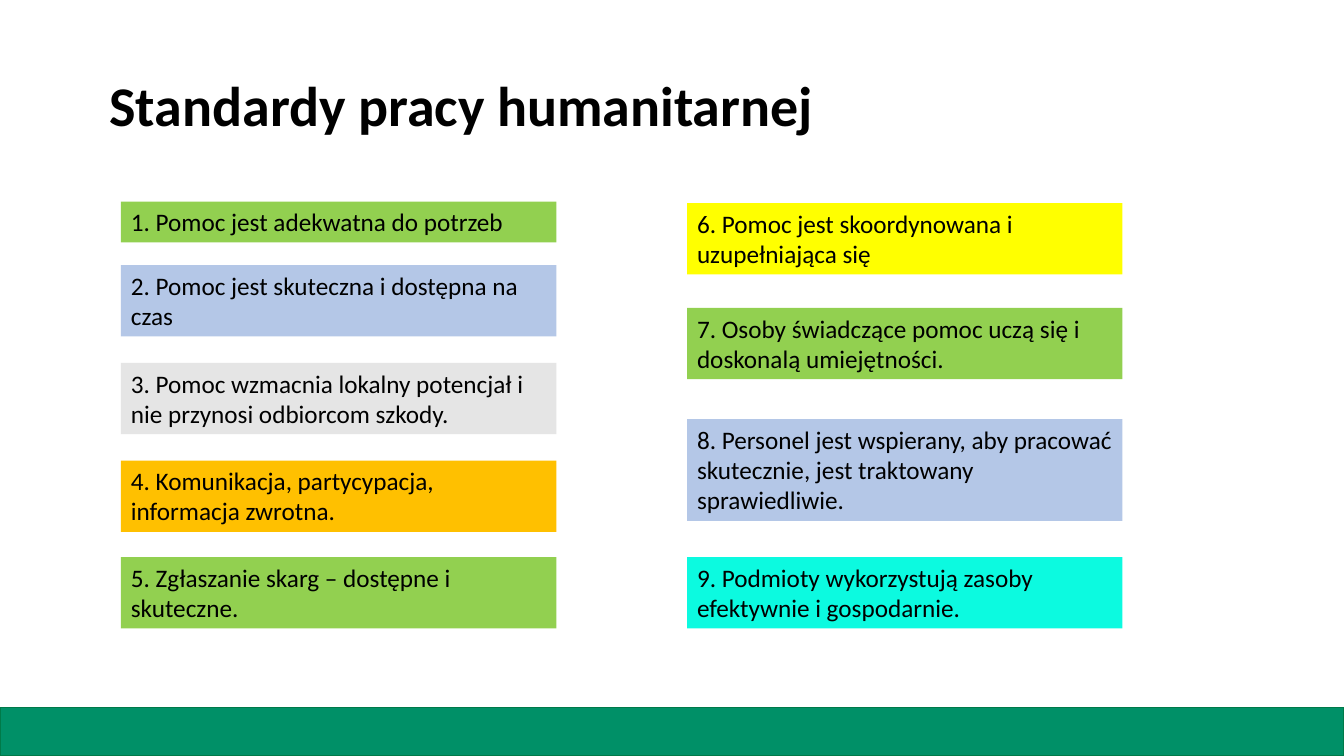
"""Build the slide on the standards of humanitarian work."""
import pptx
import pptx.dml.color
import pptx.enum.shapes
import pptx.enum.text
import pptx.util

Pt = pptx.util.Pt

SLIDE_WIDTH, SLIDE_HEIGHT = 960, 540
CARD_WIDTH = 311
LINE_HEIGHT = 21.8
CARD_PADDING = 7.3

GREEN, BLUE, GREY = "92D050", "B4C7E7", "E5E5E5"
ORANGE, YELLOW, TURQUOISE = "FFC000", "FFFF00", "0CFAE0"

COLUMNS = {
    86.4: [
        (144, 1, GREEN, "1. Pomoc jest adekwatna do potrzeb"),
        (189.4, 2, BLUE, "2. Pomoc jest skuteczna i dostępna na czas"),
        (259.2, 2, GREY, "3. Pomoc wzmacnia lokalny potencjał i nie przynosi odbiorcom szkody."),
        (329, 2, ORANGE, "4. Komunikacja, partycypacja, informacja zwrotna."),
        (398, 2, GREEN, "5. Zgłaszanie skarg – dostępne i skuteczne."),
    ],
    490.8: [
        (145.2, 2, YELLOW, "6. Pomoc jest skoordynowana i uzupełniająca się"),
        (220, 2, GREEN, "7. Osoby świadczące pomoc uczą się i doskonalą umiejętności."),
        (299.4, 3, BLUE, "8. Personel jest wspierany, aby pracować skutecznie, jest traktowany sprawiedliwie."),
        (398, 2, TURQUOISE, "9. Podmioty wykorzystują zasoby efektywnie i gospodarnie."),
    ],
}


def color(value):
    return pptx.dml.color.RGBColor.from_string(value)


class SlideBuilder:
    def __init__(self, slide, font="Calibri", text_color="000000"):
        self.slide = slide
        self.font = font
        self.text_color = text_color

    def add_text(self, shape, text, size, bold=False,
                 anchor=pptx.enum.text.MSO_ANCHOR.TOP, line_spacing=1.0):
        frame = shape.text_frame
        frame.word_wrap = True
        frame.vertical_anchor = anchor
        paragraph = frame.paragraphs[0]
        paragraph.alignment = pptx.enum.text.PP_ALIGN.LEFT
        paragraph.line_spacing = line_spacing
        run = paragraph.add_run()
        run.text = text
        run.font.name = self.font
        run.font.size = Pt(size)
        run.font.bold = bold
        run.font.color.rgb = color(self.text_color)

    def rectangle(self, left, top, width, height, fill, line=None):
        shape = self.slide.shapes.add_shape(
            pptx.enum.shapes.MSO_SHAPE.RECTANGLE, Pt(left), Pt(top), Pt(width), Pt(height))
        shape.shadow.inherit = False
        shape.fill.solid()
        shape.fill.fore_color.rgb = color(fill)
        if line:
            shape.line.color.rgb = color(line)
            shape.line.width = Pt(1)
        else:
            shape.line.fill.background()
        return shape

    def title(self, left, top, width, height, text):
        box = self.slide.shapes.add_textbox(Pt(left), Pt(top), Pt(width), Pt(height))
        self.add_text(box, text, 40, bold=True,
                      anchor=pptx.enum.text.MSO_ANCHOR.MIDDLE, line_spacing=0.9)

    def card(self, left, top, lines, fill, text):
        height = lines * LINE_HEIGHT + CARD_PADDING
        shape = self.rectangle(left, top, CARD_WIDTH, height, fill)
        self.add_text(shape, text, 18)
        shape.text_frame.auto_size = pptx.enum.text.MSO_AUTO_SIZE.SHAPE_TO_FIT_TEXT


def main():
    presentation = pptx.Presentation()
    presentation.slide_width = Pt(SLIDE_WIDTH)
    presentation.slide_height = Pt(SLIDE_HEIGHT)
    builder = SlideBuilder(presentation.slides.add_slide(presentation.slide_layouts[6]))
    builder.rectangle(0, 505.4, SLIDE_WIDTH, 34.6, "009067", line="007A49")
    builder.title(71.2, 25, 828, 104.4, "Standardy pracy humanitarnej")
    for left, cards in COLUMNS.items():
        for top, lines, fill, text in cards:
            builder.card(left, top, lines, fill, text)
    presentation.save("out.pptx")


if __name__ == "__main__":
    main()
